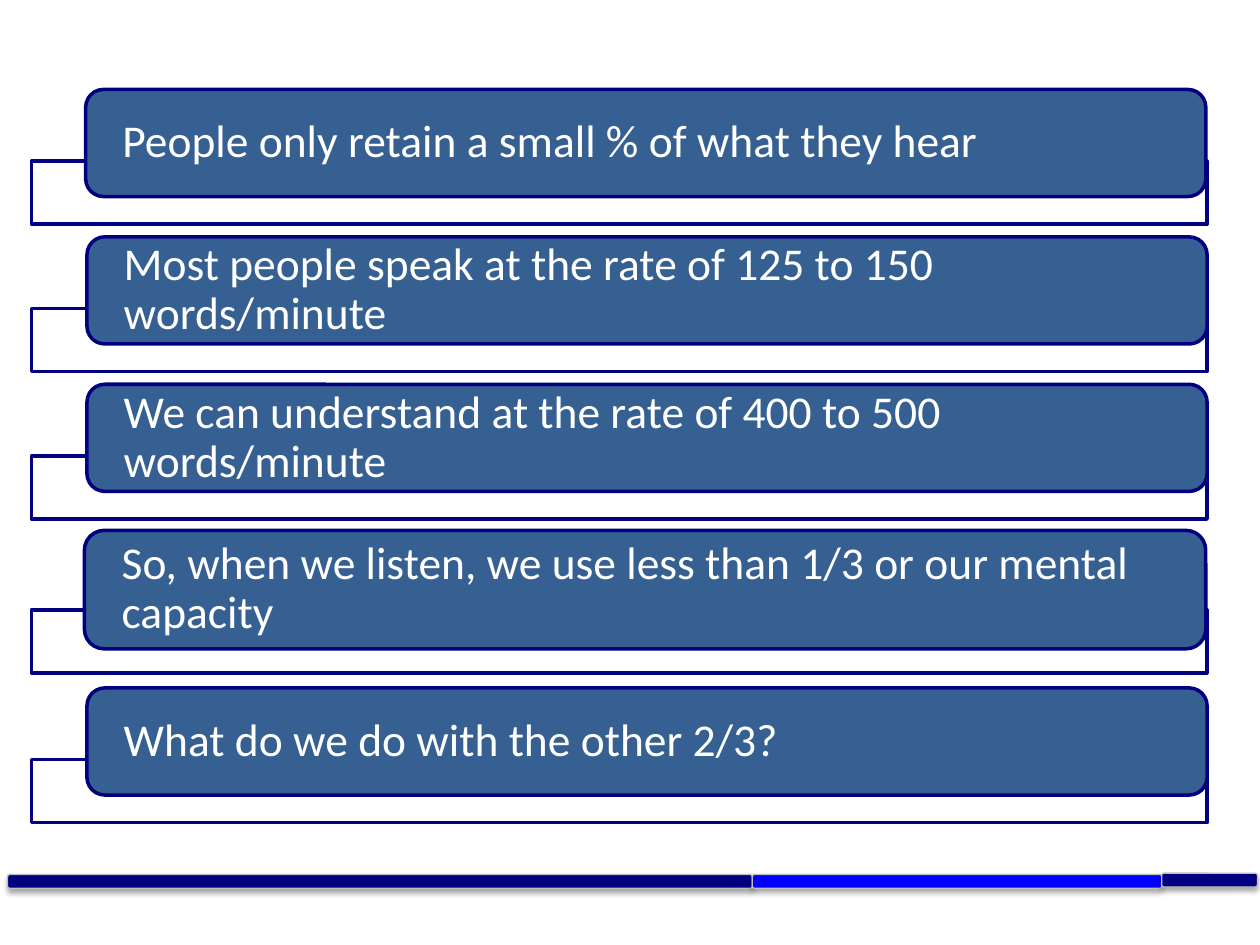
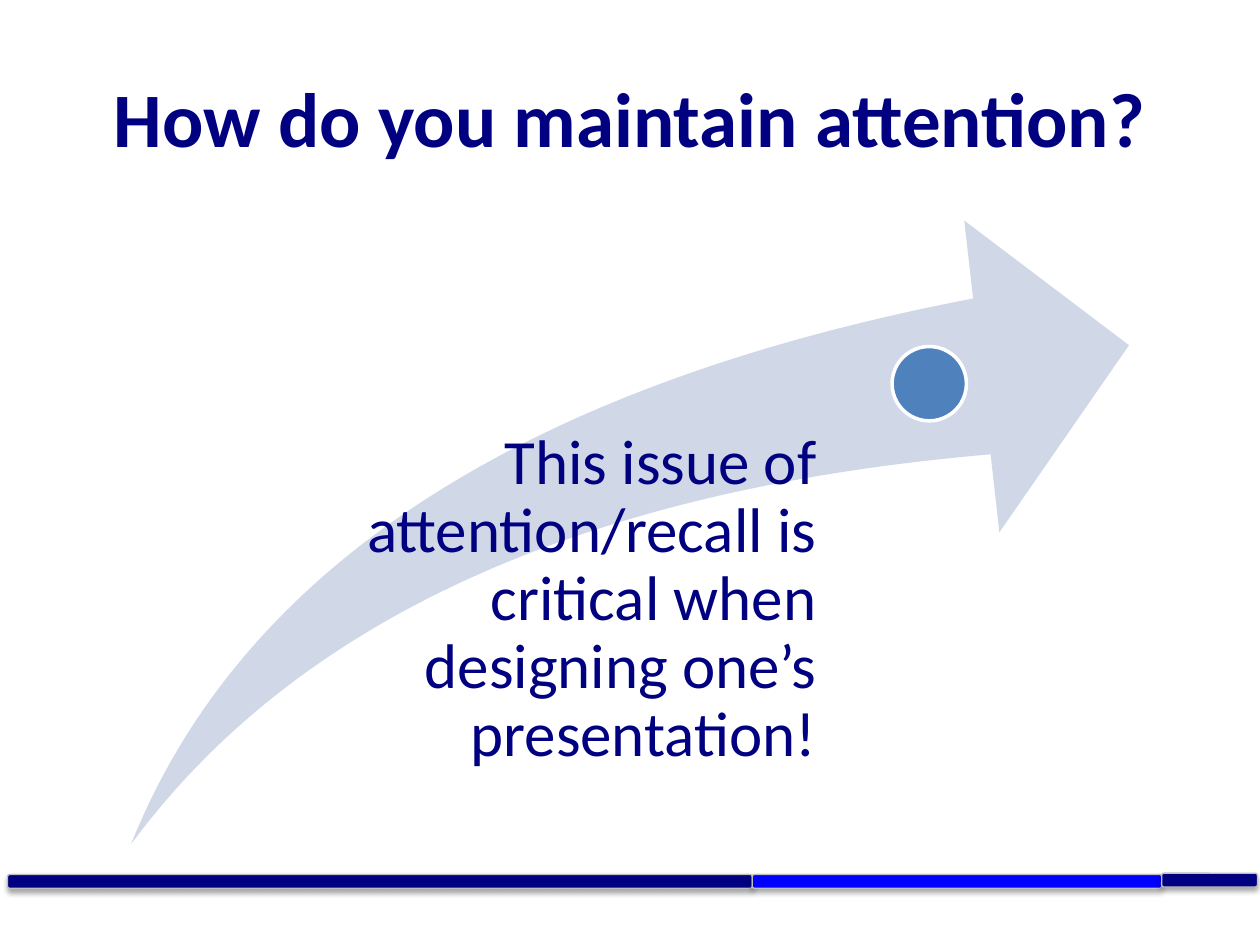
from dataclasses import dataclass

from lxml import etree
from pptx import Presentation
from pptx.dml.color import RGBColor
from pptx.enum.shapes import MSO_SHAPE
from pptx.enum.text import MSO_ANCHOR, PP_ALIGN
from pptx.oxml.ns import qn
from pptx.util import Emu, Pt

RECTANGLE = MSO_SHAPE.RECTANGLE
ROUNDED = MSO_SHAPE.ROUNDED_RECTANGLE
OVAL = MSO_SHAPE.OVAL
SWOOSH = MSO_SHAPE.SWOOSH_ARROW
LEFT, CENTER, RIGHT = PP_ALIGN.LEFT, PP_ALIGN.CENTER, PP_ALIGN.RIGHT
TOP, MIDDLE = MSO_ANCHOR.TOP, MSO_ANCHOR.MIDDLE

EMU_PER_PX = 9144  # 100 px to the inch
FONT = "Calibri"
COLORS = {
    "navy": "000080",
    "blue": "0000FF",
    "edge": "BFBFBF",
    "card": "376092",
    "white": "FFFFFF",
    "swoosh": "D0D8E8",
    "dot": "4F81BD",
    "shadow": "000000",
}


@dataclass(frozen=True)
class Frame:
    left: int
    top: int
    width: int
    height: int

    def emu(self) -> list[Emu]:
        return [px(n) for n in (self.left, self.top, self.width, self.height)]


@dataclass(frozen=True)
class TextStyle:
    size: int
    color: str
    align: PP_ALIGN = LEFT
    anchor: MSO_ANCHOR = MIDDLE
    bold: bool = False
    spacing: float = 1.0
    insets: tuple[int, int, int, int] = (10, 5, 10, 5)  # left, top, right, bottom


@dataclass(frozen=True)
class Band:
    frame: Frame
    color: str


@dataclass(frozen=True)
class Point:
    text: str
    frame: Frame


TITLE_STYLE = TextStyle(44, "navy", CENTER, bold=True)
CARD_STYLE = TextStyle(26, "white", spacing=0.9, insets=(25, 0, 25, 0))
MESSAGE_STYLE = TextStyle(36, "navy", RIGHT, TOP, spacing=0.9, insets=(0, 0, 31, 0))

FOOTER = [
    Band(Frame(6, 694, 591, 11), "navy"),
    Band(Frame(597, 694, 325, 11), "blue"),
    Band(Frame(922, 693, 76, 11), "navy"),
]

POINTS = [
    Point("People only retain a small % of what they hear",
          Frame(68, 71, 889, 85)),
    Point("Most people speak at the rate of 125 to 150 words/minute",
          Frame(69, 188, 889, 85)),
    Point("We can understand at the rate of 400 to 500 words/minute",
          Frame(69, 305, 889, 85)),
    Point("So, when we listen, we use less than 1/3 or our mental capacity",
          Frame(67, 421, 890, 94)),
    Point("What do we do with the other 2/3?",
          Frame(69, 546, 889, 85)),
]
STRIP_LEFT, STRIP_WIDTH, STRIP_HEIGHT = 25, 933, 50
STRIP_START = 0.67  # share of the card height above the strip


def px(length: int) -> Emu:
    return Emu(length * EMU_PER_PX)


def rgb(name: str) -> RGBColor:
    return RGBColor.from_string(COLORS[name])


def add_figure(page, kind, frame: Frame, fill: str, line: str | None = None,
               line_width: float = 2):
    figure = page.shapes.add_shape(kind, *frame.emu())
    figure.shadow.inherit = False
    figure.fill.solid()
    figure.fill.fore_color.rgb = rgb(fill)
    if line:
        figure.line.color.rgb = rgb(line)
        figure.line.width = Pt(line_width)
    else:
        figure.line.fill.background()
    return figure


def write(box, text: str, style: TextStyle) -> None:
    text_frame = box.text_frame
    text_frame.text = text
    text_frame.word_wrap = True
    text_frame.vertical_anchor = style.anchor
    (text_frame.margin_left, text_frame.margin_top,
     text_frame.margin_right, text_frame.margin_bottom) = map(px, style.insets)
    para = text_frame.paragraphs[0]
    para.alignment = style.align
    para.line_spacing = style.spacing
    font = para.runs[0].font
    font.name = FONT
    font.size = Pt(style.size)
    font.bold = style.bold
    font.color.rgb = rgb(style.color)


def add_text(page, frame: Frame, text: str, style: TextStyle) -> None:
    write(page.shapes.add_textbox(*frame.emu()), text, style)


def set_alpha(color_element, percent: int) -> None:
    etree.SubElement(color_element, qn("a:alpha"), val=str(percent * 1000))


def add_shadow(figure) -> None:
    effects = figure.element.spPr.find(qn("a:effectLst"))
    shadow = etree.SubElement(
        effects, qn("a:outerShdw"), blurRad=str(Pt(3.1)), dist=str(Pt(1.8)),
        dir="5400000", rotWithShape="0")
    color = etree.SubElement(shadow, qn("a:srgbClr"), val=COLORS["shadow"])
    set_alpha(color, 35)


def add_page(deck):
    page = deck.slides.add_slide(deck.slide_layouts[6])
    page.background.fill.solid()
    page.background.fill.fore_color.rgb = rgb("white")
    for band in FOOTER:
        add_shadow(add_figure(page, ROUNDED, band.frame, band.color, "edge", 0.75))
    return page


def add_point(page, point: Point) -> None:
    strip_top = round(point.frame.top + STRIP_START * point.frame.height)
    strip_frame = Frame(STRIP_LEFT, strip_top, STRIP_WIDTH, STRIP_HEIGHT)
    strip = add_figure(page, RECTANGLE, strip_frame, "white", "navy")
    fill = strip.element.spPr.find(qn("a:solidFill"))
    set_alpha(fill[0], 90)
    card = add_figure(page, ROUNDED, point.frame, "card", "navy")
    write(card, point.text, CARD_STYLE)


def build_listening_page(deck) -> None:
    page = add_page(deck)
    for point in POINTS:
        add_point(page, point)


def build_attention_page(deck) -> None:
    page = add_page(deck)
    add_text(page, Frame(50, 30, 900, 125), "How do you maintain attention?", TITLE_STYLE)

    # Rising arrow with its marker
    swoosh = add_figure(page, SWOOSH, Frame(104, 175, 792, 495), "swoosh")
    swoosh.adjustments[0] = 0.25
    swoosh.adjustments[1] = 0.25
    add_figure(page, OVAL, Frame(708, 275, 59, 59), "dot", "white")

    add_text(page, Frame(241, 341, 438, 293),
             "This issue of attention/recall is critical when designing one’s presentation!",
             MESSAGE_STYLE)


def main() -> None:
    deck = Presentation()
    deck.slide_width, deck.slide_height = px(1000), px(750)
    build_listening_page(deck)
    build_attention_page(deck)
    deck.save("out.pptx")


if __name__ == "__main__":
    main()
